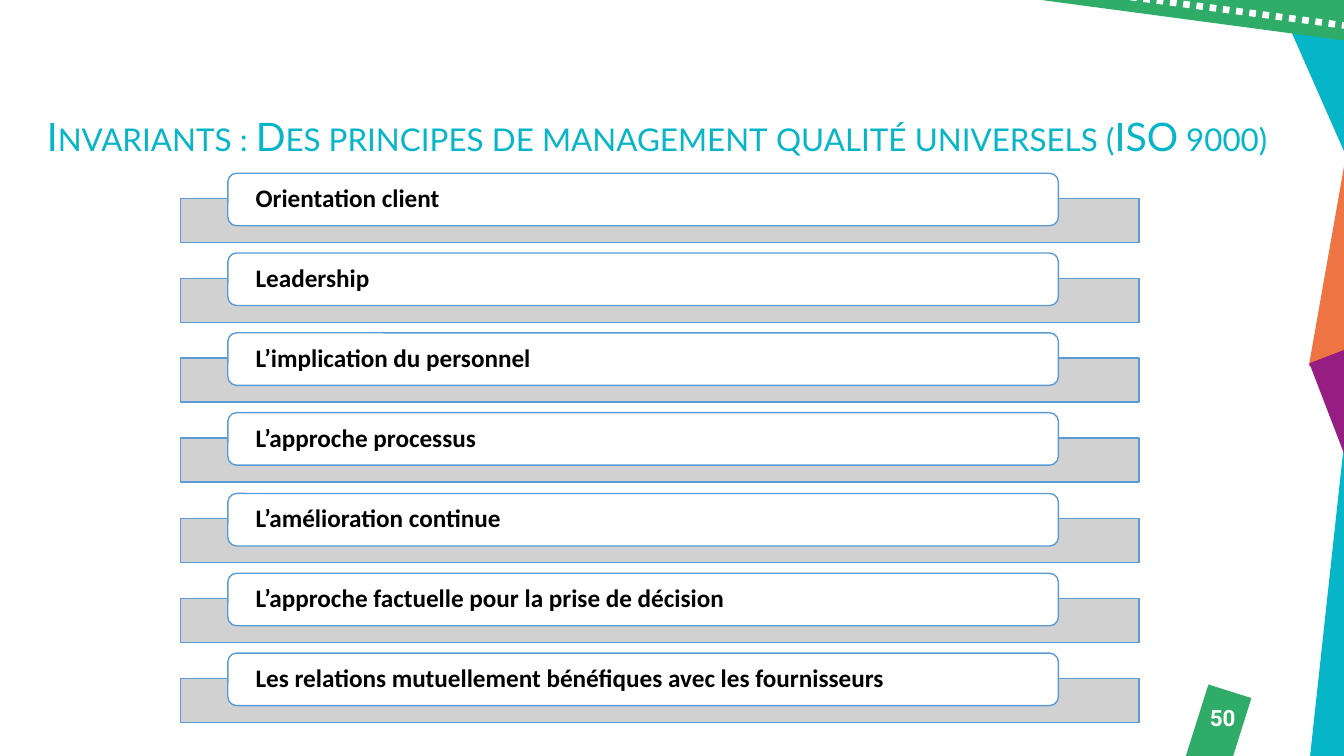
"""Build the slide on the universal quality management principles."""
from lxml.etree import SubElement
from pptx import Presentation
from pptx.dml.color import RGBColor
from pptx.enum.dml import MSO_LINE
from pptx.enum.shapes import MSO_CONNECTOR, MSO_SHAPE
from pptx.enum.text import MSO_ANCHOR, MSO_AUTO_SIZE, PP_ALIGN
from pptx.oxml.ns import qn
from pptx.util import Emu, Pt

EMU_PER_PX = 9525
GREEN, TEAL, ORANGE, PURPLE = "2FAC67", "06B5C7", "EE7443", "961D82"
WHITE, BLACK, GREY, BLUE = "FFFFFF", "000000", "CCCCCC", "5B9BD5"

RIBBONS = [
    ((1118, 676, 82, 43), 107.5, GREEN),
    ((1177, 69, 258, 77), 246.2, TEAL),
    ((1124, 540, 327, 45), 276.2, TEAL),
    ((1099, 115, 426, 58), 100, ORANGE),
    ((1225, 378, 153, 58), 69, PURPLE),
    ((995, -45, 478, 77), 7.6, GREEN),
]
PRINCIPLES = [
    "Orientation client",
    "Leadership",
    "L’implication du personnel",
    "L’approche processus",
    "L’amélioration continue",
    "L’approche factuelle pour la prise de décision",
    "Les relations mutuellement bénéfiques avec les fournisseurs",
]
FIRST_CARD_TOP = 165
CARDS_SPAN = 457
TITLE_FORMAT = {"name": "Lato", "size": Pt(28), "bold": False}
CARD_FORMAT = {"name": "Calibri", "size": Pt(18), "bold": True}
NUMBER_FORMAT = {"name": "Roboto", "size": Pt(16), "bold": True}


def px(length):
    """Turn pixels into EMU."""
    return Emu(length * EMU_PER_PX)


def color(value):
    """Turn a hex string into a colour."""
    return RGBColor.from_string(value)


def write_text(shape, text, font_format, font_color, alignment, line_spacing=None):
    """Write one vertically centred paragraph into a shape."""
    frame = shape.text_frame
    frame.auto_size = MSO_AUTO_SIZE.NONE
    frame.word_wrap = True
    frame.vertical_anchor = MSO_ANCHOR.MIDDLE
    paragraph = frame.paragraphs[0]
    paragraph.alignment = alignment
    paragraph.line_spacing = line_spacing
    run = paragraph.add_run()
    run.text = text
    for name, value in font_format.items():
        setattr(run.font, name, value)
    run.font.color.rgb = color(font_color)


def add_block(slide, kind, box, fill, outline=None):
    """Add a filled preset shape, outlined if a colour is given."""
    shape = slide.shapes.add_shape(kind, *map(px, box))
    shape.shadow.inherit = False
    shape.fill.solid()
    shape.fill.fore_color.rgb = color(fill)
    if outline:
        shape.line.color.rgb = color(outline)
        shape.line.width = Pt(1)
    else:
        shape.line.fill.background()
    return shape


def add_dotted_line(slide, start, end):
    """Add the white dotted line of the top ribbon."""
    line = slide.shapes.add_connector(MSO_CONNECTOR.STRAIGHT, *map(px, start + end))
    line.line.color.rgb = color(WHITE)
    line.line.width = Pt(4.75)
    line.line.dash_style = MSO_LINE.ROUND_DOT
    SubElement(line.element.spPr, qn("a:effectLst"))


def add_title(slide, text):
    """Place the title and set it in small capitals."""
    title = slide.shapes.title
    title.left, title.top, title.width, title.height = map(px, (35, 63, 1206, 139))
    write_text(title, text, TITLE_FORMAT, TEAL, PP_ALIGN.LEFT, 0.9)
    for properties in title.element.iter(qn("a:rPr")):
        properties.set("cap", "small")


def add_page_number(slide, number):
    """Add the page number over the green tab."""
    box = slide.shapes.add_textbox(*map(px, (1136, 662, 57, 43)))
    write_text(box, number, NUMBER_FORMAT, WHITE, PP_ALIGN.CENTER)


def add_principle(slide, top, text):
    """Add a grey bar with its white card."""
    bar = add_block(slide, MSO_SHAPE.RECTANGLE, (172, top + 24, 913, 42), GREY, BLUE)
    for fill_color in bar.element.spPr.find(qn("a:solidFill")):
        SubElement(fill_color, qn("a:alpha"), val="90000")
    card = add_block(slide, MSO_SHAPE.ROUNDED_RECTANGLE, (217, top, 791, 50), WHITE, BLUE)
    margins = {"margin_left": 24, "margin_right": 24, "margin_top": 0, "margin_bottom": 0}
    for name, value in margins.items():
        setattr(card.text_frame, name, px(value))
    write_text(card, text, CARD_FORMAT, BLACK, PP_ALIGN.LEFT, 0.9)


def main():
    """Build and save the presentation."""
    presentation = Presentation()
    presentation.slide_width, presentation.slide_height = px(1280), px(720)
    slide = presentation.slides.add_slide(presentation.slide_layouts[5])
    for box, rotation, fill in RIBBONS:
        add_block(slide, MSO_SHAPE.RECTANGLE, box, fill).rotation = rotation
    add_dotted_line(slide, (1001, -13), (1301, 27))
    add_title(slide, "Invariants : Des principes de management qualité universels (ISO 9000)")
    add_page_number(slide, "50")
    for index, text in enumerate(PRINCIPLES):
        offset = round(index * CARDS_SPAN / (len(PRINCIPLES) - 1))
        add_principle(slide, FIRST_CARD_TOP + offset, text)
    presentation.save("out.pptx")


if __name__ == "__main__":
    main()
